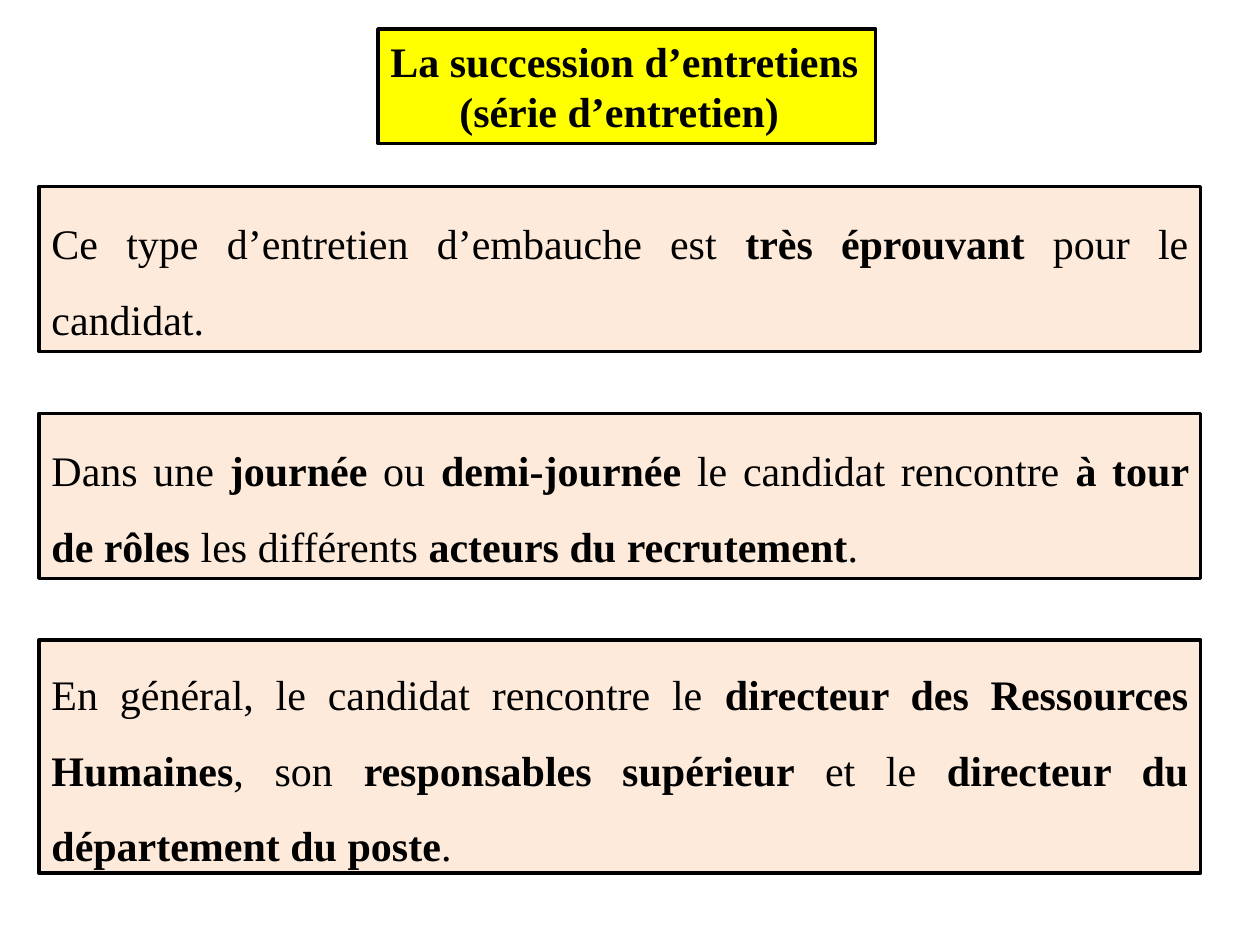
from pptx import Presentation
from pptx.dml.color import RGBColor
from pptx.enum.shapes import MSO_SHAPE as SHAPE
from pptx.enum.text import MSO_ANCHOR as ANCHOR, MSO_AUTO_SIZE as AUTO, PP_ALIGN as ALIGN
from pptx.util import Inches, Pt

FONT = "Times New Roman"
BLACK, YELLOW, PEACH = "000000", "FFFF00", "FDEADA"
BODY_LEFT, BODY_WIDTH = 0.31, 9.22

TITLE = [("*La succession d’entretiens*", ALIGN.LEFT),
         ("*(série d’entretien) *", ALIGN.CENTER)]
STATEMENTS = [
    (1.48, 1.31, ANCHOR.TOP,
     "Ce type d’entretien d’embauche est *très éprouvant *pour le candidat. "),
    (3.28, 1.31, ANCHOR.TOP,
     "Dans une *journée* ou *demi-journée* le candidat rencontre "
     "*à tour de rôles* les différents *acteurs du recrutement*. "),
    (5.08, 1.85, ANCHOR.MIDDLE,
     "En général, le candidat rencontre le *directeur des Ressources Humaines*, "
     "son *responsables supérieur *et le *directeur du département du poste*."),
]


def color(value):
    return RGBColor.from_string(value)


def add_box(slide, left, top, width, height, fill, wrap=True, anchor=ANCHOR.TOP):
    sp = slide.shapes.add_shape(SHAPE.RECTANGLE, Inches(left), Inches(top),
                                Inches(width), Inches(height))
    sp.shadow.inherit = False
    sp.fill.solid()
    sp.fill.fore_color.rgb = color(fill)
    sp.line.color.rgb = color(BLACK)
    sp.line.width = Pt(2)
    tf = sp.text_frame
    tf.word_wrap = wrap
    tf.auto_size = AUTO.SHAPE_TO_FIT_TEXT
    tf.vertical_anchor = anchor
    return tf


def write(p, text, align=ALIGN.LEFT, spacing=None, size=24, ink=BLACK):
    p.alignment = align
    p.line_spacing = spacing
    for i, part in enumerate(text.split("*")):
        if part:
            r = p.add_run()
            r.text = part
            r.font.name = FONT
            r.font.size = Pt(size)
            r.font.bold = i % 2 == 1
            r.font.color.rgb = color(ink)


def add_title(slide):
    tf = add_box(slide, 3, 0.23, 3.95, 0.91, YELLOW, wrap=False)
    tf.add_paragraph()
    for p, (text, align) in zip(tf.paragraphs, TITLE):
        write(p, text, align=align)


def add_statement(slide, top, height, anchor, text):
    tf = add_box(slide, BODY_LEFT, top, BODY_WIDTH, height, PEACH, anchor=anchor)
    write(tf.paragraphs[0], text, align=ALIGN.JUSTIFY, spacing=1.5)


def main():
    prs = Presentation()
    prs.slide_width, prs.slide_height = Inches(10), Inches(7.5)
    slide = prs.slides.add_slide(prs.slide_layouts[6])
    add_title(slide)
    for statement in STATEMENTS:
        add_statement(slide, *statement)
    prs.save("out.pptx")


if __name__ == "__main__":
    main()
